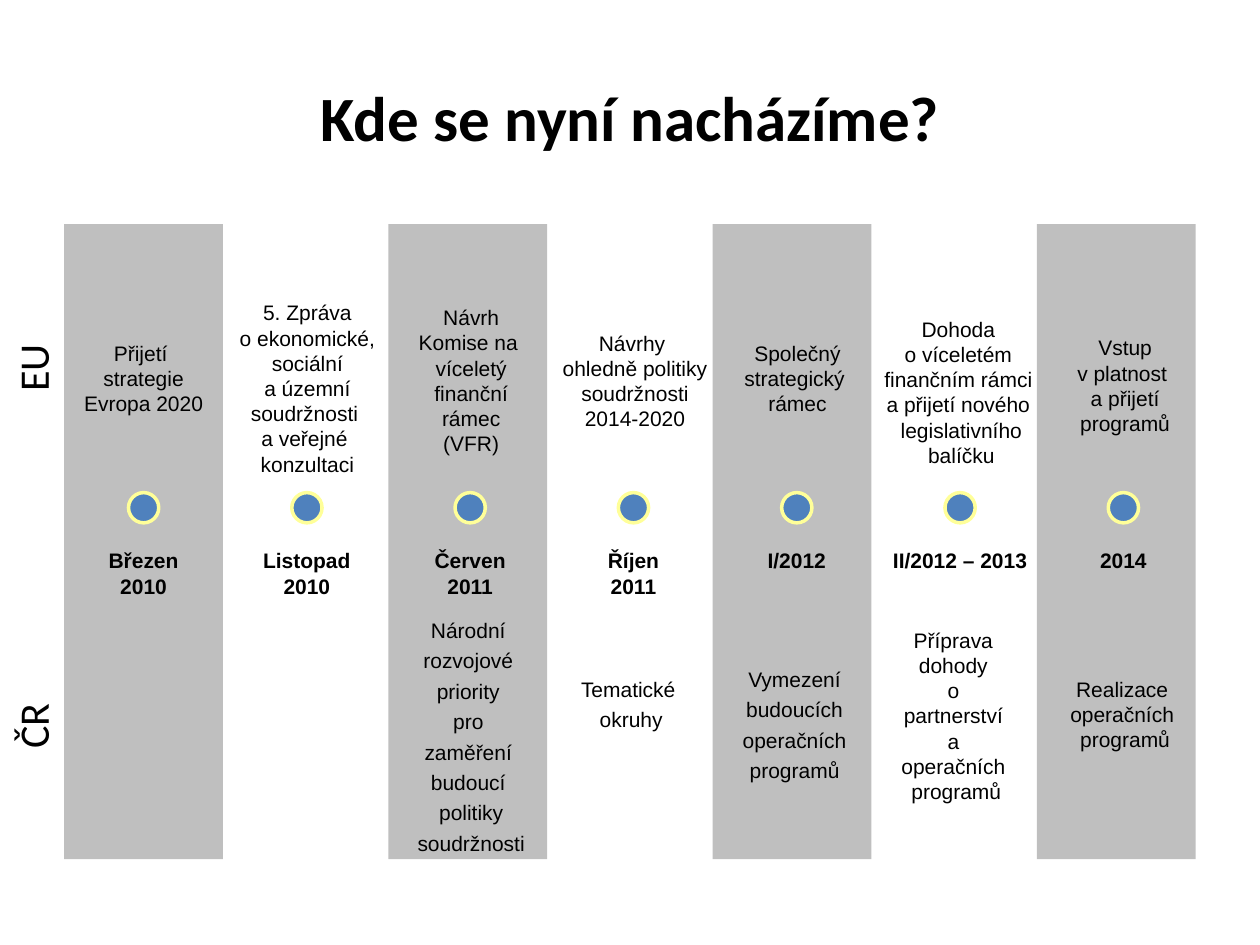
from lxml import etree
from pptx import Presentation
from pptx import util as u
from pptx.dml.color import RGBColor
from pptx.enum import shapes, text
from pptx.oxml.ns import qn

BLACK = "000000"
DOT_FILL = "4F81BD"
DOT_LINE = "FFFF99"
COLUMN_STEP = 1.296
NOTE_WIDTH = 1.6
TOP, BOTTOM = text.MSO_ANCHOR.TOP, text.MSO_ANCHOR.BOTTOM

DATES = [["Březen", "2010"], ["Listopad", "2010"], ["Červen", "2011"],
         ["Říjen", "2011"], ["I/2012"], ["II/2012 – 2013"], ["2014"]]

# Notes: centre, top, height, anchor, paragraphs (\n is a line break)
EU_NOTES = [
    (1.14, 2.65, 1.1, TOP, ["Přijetí \nstrategie", "Evropa 2020"]),
    (2.44, 2.13, 1.7, BOTTOM, ["5. Zpráva", "o ekonomické,", "sociální", "a územní",
                               "soudržnosti \na veřejné ", "konzultaci"]),
    (3.74, 2.37, 1.7, TOP, ["Návrh\nKomise na \nvíceletý", "finanční", "rámec", "(VFR)"]),
    (5.04, 2.57, 0.9, BOTTOM, ["Návrhy \nohledně politiky", "soudržnosti", "2014-2020"]),
    (6.33, 2.65, 1.51, TOP, ["Společný", "strategický \nrámec"]),
    (7.63, 2.41, 1.35, BOTTOM, ["Dohoda \no víceletém \nfinančním rámci \n"
                                "a přijetí nového \nlegislativního", "balíčku"]),
    (8.93, 2.61, 0.9, TOP, ["Vstup\nv platnost \na přijetí\nprogramů"]),
]
CZECH_NOTES = [
    (7.59, 4.93, 0.9, TOP, ["Příprava \ndohody \no \npartnerství \na \noperačních \nprogramů"]),
    (8.93, 5.32, 0.9, TOP, ["Realizace \noperačních \nprogramů"]),
]
SPACED_CZECH_NOTES = [
    (3.74, 4.85, 1.7, TOP, ["Národní ", "rozvojové ", "priority ", "pro ", "zaměření ",
                            "budoucí ", "politiky", "soudržnosti"]),
    (5.01, 5.32, 1.23, TOP, ["Tematické ", "okruhy"]),
    (6.33, 5.24, 1.23, TOP, ["Vymezení ", "budoucích ", "operačních ", "programů "]),
]


def color(value):
    return RGBColor.from_string(value)


def add_text(paragraph, content, size, font="Arial", bold=False):
    """Fill a centred paragraph run by run, breaking lines at \\n."""
    paragraph.alignment = text.PP_ALIGN.CENTER
    for index, line in enumerate(content.split("\n")):
        if index:
            paragraph.add_line_break()
        run = paragraph.add_run()
        run.text = line
        run.font.size = u.Pt(size)
        run.font.name = font
        run.font.bold = bold
        run.font.color.rgb = color(BLACK)


def add_title(slide, content):
    title = slide.shapes.title
    title.left, title.top = u.Inches(0.5), u.Inches(0.3)
    title.width, title.height = u.Inches(9), u.Inches(1.25)
    title.text_frame.vertical_anchor = text.MSO_ANCHOR.MIDDLE
    add_text(title.text_frame.paragraphs[0], content, 36, "Calibri", True)


def add_band(slide, left):
    band = slide.shapes.add_shape(shapes.MSO_SHAPE.RECTANGLE, u.Inches(left),
                                  u.Inches(1.78), u.Inches(1.26), u.Inches(5.04))
    band.shadow.inherit = False
    band.fill.solid()
    band.fill.fore_color.rgb = color(BLACK)
    band.line.fill.background()
    # 25 % opacity
    fill_color = band._element.spPr.find(qn("a:solidFill"))[0]
    etree.SubElement(fill_color, qn("a:alpha")).set("val", "25000")


def add_dot(slide, left):
    dot = slide.shapes.add_shape(shapes.MSO_SHAPE.OVAL, u.Inches(left),
                                 u.Inches(3.91), u.Inches(0.24), u.Inches(0.24))
    dot.shadow.inherit = False
    dot.fill.solid()
    dot.fill.fore_color.rgb = color(DOT_FILL)
    dot.line.color.rgb = color(DOT_LINE)
    dot.line.width = u.Pt(2)


def add_note(slide, center, top, height, anchor, paragraphs, bold=False, gap=0):
    box = slide.shapes.add_textbox(u.Inches(center - NOTE_WIDTH / 2), u.Inches(top),
                                   u.Inches(NOTE_WIDTH), u.Inches(height))
    frame = box.text_frame
    frame.word_wrap = False
    frame.vertical_anchor = anchor
    for index, content in enumerate(paragraphs):
        paragraph = frame.add_paragraph() if index else frame.paragraphs[0]
        if index and gap:
            paragraph.space_before = u.Pt(gap)
        add_text(paragraph, content, 12, bold=bold)


def add_row_label(slide, top, content):
    label = slide.shapes.add_textbox(u.Inches(-0.89), u.Inches(top),
                                     u.Inches(2.29), u.Inches(0.5))
    label.rotation = 270
    label.text_frame.word_wrap = True
    label.text_frame.auto_size = text.MSO_AUTO_SIZE.SHAPE_TO_FIT_TEXT
    add_text(label.text_frame.paragraphs[0], content, 24, "Calibri")


def main():
    presentation = Presentation()
    presentation.slide_width, presentation.slide_height = u.Inches(10), u.Inches(7.5)
    slide = presentation.slides.add_slide(presentation.slide_layouts[5])
    add_title(slide, "Kde se nyní nacházíme?")

    # Grey bands behind every second column
    for index in range(4):
        add_band(slide, 0.51 + 2.573 * index)

    # Timeline dots and dates
    for index, date in enumerate(DATES):
        offset = COLUMN_STEP * index
        add_dot(slide, 1.02 + offset)
        add_note(slide, 1.14 + offset, 4.3, 0.56, TOP, date, bold=True)

    # Steps above and below the timeline
    for note in EU_NOTES + CZECH_NOTES:
        add_note(slide, *note)
    for note in SPACED_CZECH_NOTES:
        add_note(slide, *note, gap=3)

    # Row labels
    add_row_label(slide, 2.67, "EU")
    add_row_label(slide, 5.51, "ČR")

    presentation.save("out.pptx")


if __name__ == "__main__":
    main()
